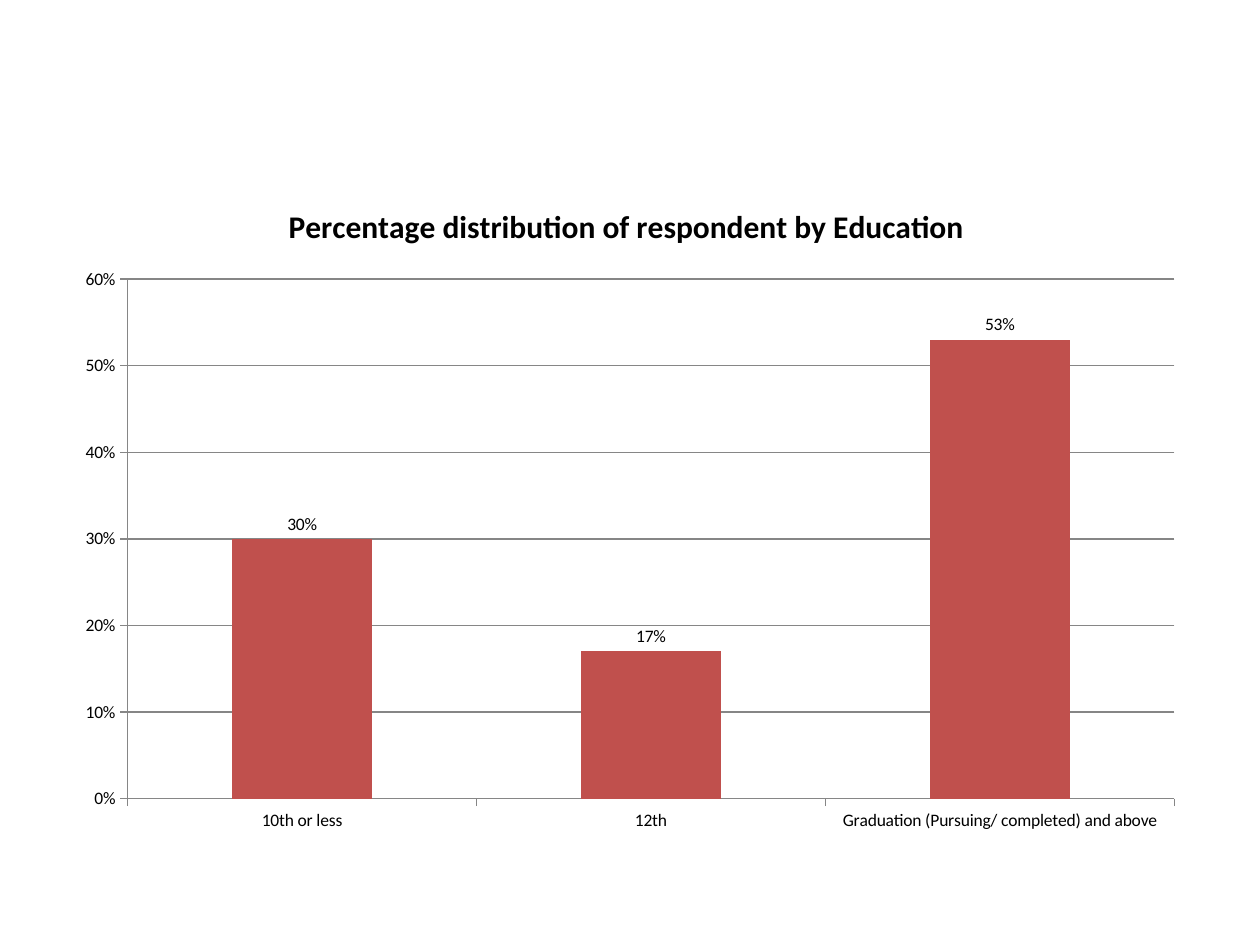
from dataclasses import dataclass

from pptx import Presentation
from pptx import util as u
from pptx.chart.data import CategoryChartData
from pptx.dml.color import RGBColor
from pptx.enum import chart as ch


@dataclass(frozen=True)
class Theme:
    face: str = "Calibri"
    ink: RGBColor = RGBColor(0, 0, 0)
    rule: RGBColor = RGBColor(0x86, 0x86, 0x86)
    bar: RGBColor = RGBColor(0xC0, 0x50, 0x4D)
    text: int = 10
    title: int = 18


THEME = Theme()
SHARES = {
    "10th or less": 0.3,
    "12th": 0.17,
    "Graduation (Pursuing/ completed) and above": 0.53,
}


def set_font(font, size, bold=False):
    font.name = THEME.face
    font.size = u.Pt(size)
    font.bold = bold
    font.color.rgb = THEME.ink


def set_line(line):
    line.color.rgb = THEME.rule
    line.width = u.Pt(0.75)


def add_bars(slide, shares):
    data = CategoryChartData(number_format="0%")
    data.categories = list(shares)
    data.add_series("Series 1", list(shares.values()))
    box = [u.Inches(n) for n in (0.5, 1.42, 9, 5.28)]
    frame = slide.shapes.add_chart(ch.XL_CHART_TYPE.COLUMN_CLUSTERED, *box, data)
    chart = frame.chart
    chart.has_legend = False
    set_font(chart.font, THEME.text)
    return chart


def set_title(chart, words):
    chart.has_title = True
    chart.chart_title.include_in_layout = False
    para = chart.chart_title.text_frame.paragraphs[0]
    para.text = words
    set_font(para.font, THEME.title, True)


def set_axes(chart):
    for axis in (chart.category_axis, chart.value_axis):
        axis.major_tick_mark = ch.XL_TICK_MARK.OUTSIDE
        axis.minor_tick_mark = ch.XL_TICK_MARK.NONE
        set_line(axis.format.line)
    scale = chart.value_axis
    scale.minimum_scale, scale.maximum_scale = 0, 0.6
    scale.major_unit = 0.1
    scale.tick_labels.number_format = "0%"
    scale.tick_labels.number_format_is_linked = False
    scale.has_major_gridlines = True
    set_line(scale.major_gridlines.format.line)


def set_bars(chart):
    plot = chart.plots[0]
    plot.gap_width = 150
    plot.vary_by_categories = False
    bars = plot.series[0]
    bars.format.fill.solid()
    bars.format.fill.fore_color.rgb = THEME.bar
    labels = bars.data_labels
    labels.show_value = True
    labels.position = ch.XL_LABEL_POSITION.OUTSIDE_END
    labels.number_format = "0%"
    labels.number_format_is_linked = False
    set_font(labels.font, THEME.text)


def main():
    deck = Presentation()
    deck.slide_width, deck.slide_height = u.Inches(10), u.Inches(7.5)
    slide = deck.slides.add_slide(deck.slide_layouts[6])
    chart = add_bars(slide, SHARES)
    set_title(chart, "Percentage distribution of respondent by Education ")
    set_axes(chart)
    set_bars(chart)
    deck.save("out.pptx")


if __name__ == "__main__":
    main()
